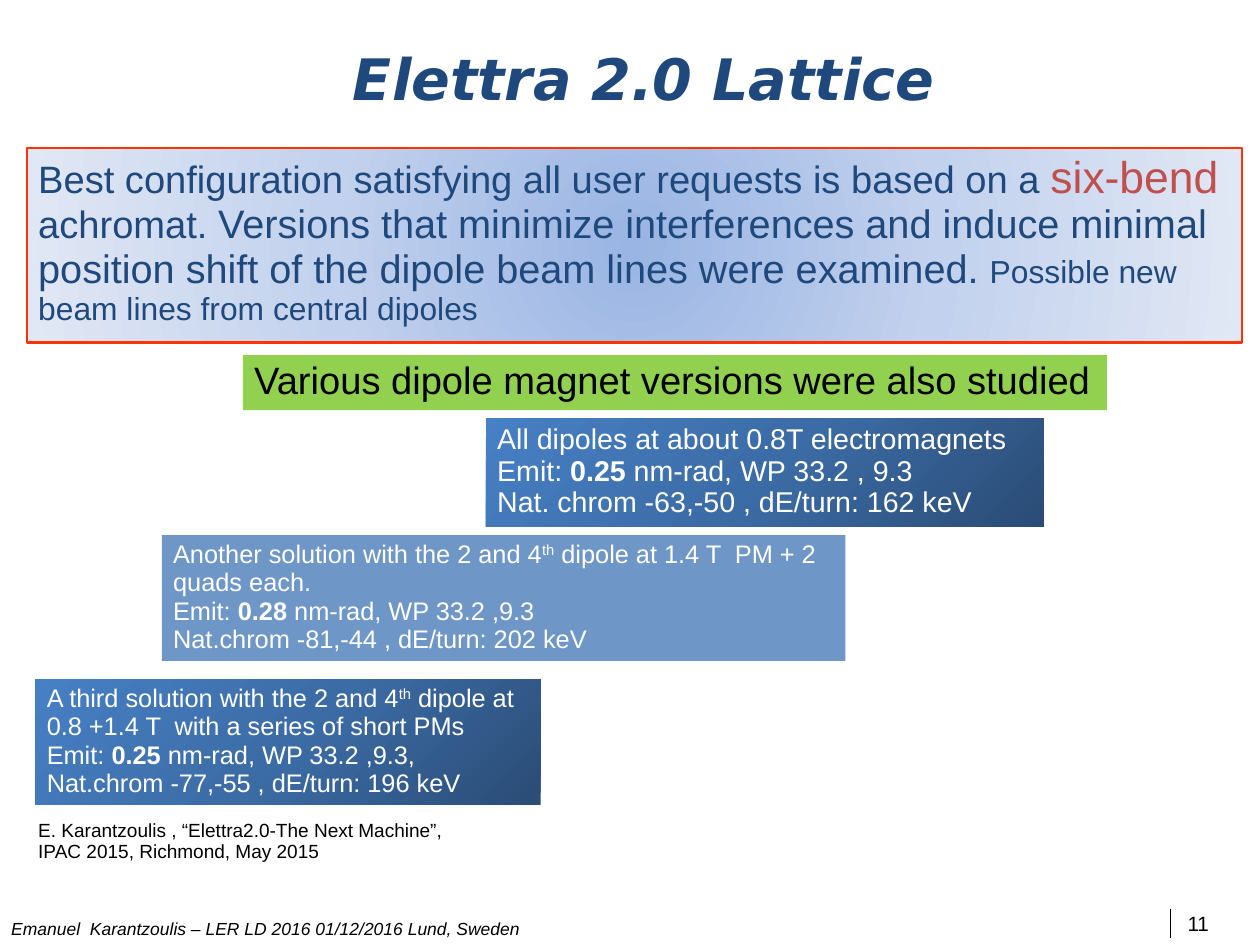
"""Builds the Elettra 2.0 lattice slide."""
from pptx import Presentation
from pptx.dml.color import RGBColor
from pptx.enum.shapes import MSO_CONNECTOR, MSO_SHAPE
from pptx.enum.text import MSO_ANCHOR, MSO_AUTO_SIZE, PP_ALIGN
from pptx.oxml import parse_xml
from pptx.oxml.ns import qn
from pptx.util import Pt
from lxml.etree import SubElement

NAVY = RGBColor(0x1F, 0x49, 0x7D)
RED = RGBColor(0xC0, 0x50, 0x4D)
EDGE = RGBColor(0xFF, 0x33, 0x00)
BLUE = RGBColor(0x4F, 0x81, 0xBD)
GREEN = RGBColor(0x92, 0xD0, 0x50)
BLACK = RGBColor(0, 0, 0)
WHITE = RGBColor(0xFF, 0xFF, 0xFF)

NS = "http://schemas.openxmlformats.org/drawingml/2006/main"
PALE = ("9AB5E4", "C2D1ED", "E1E8F5")
DARK = ("2A4C75", "3C6CA6", "4780C5")
MID = '<a:path path="circle"><a:fillToRect l="50000" t="50000" r="50000" b="50000"/></a:path>'
CORNER = '<a:path path="circle"><a:fillToRect l="100000" t="100000"/></a:path>'
SLANT = '<a:lin ang="13500000" scaled="1"/>'

BOLD = {"bold": True}
SUPER = {"base": 30000}

TITLE = [["Elettra 2.0 Lattice"]]
FOOTER = [["Emanuel  Karantzoulis – LER LD 2016 01/12/2016 Lund, Sweden"]]
NUMBER = [["11"]]
SOURCE = [["E. Karantzoulis , “Elettra2.0-The Next Machine”, IPAC 2015, Richmond, May 2015"]]
BEST = [[
    "Best configuration satisfying all user requests is based on a ",
    ("six-bend", {"size": 28, "color": RED}),
    " achromat. ",
    ("Versions that minimize interferences and induce minimal position shift "
     "of the dipole beam lines were examined. ", {"size": 25}),
    ("Possible new beam lines from central dipoles", {"size": 20}),
]]
STUDY = [["Various dipole magnet versions were also studied"]]
FIRST = [
    ["All dipoles at about 0.8T electromagnets"],
    ["Emit: ", ("0.25", BOLD), " nm-rad, WP 33.2 , 9.3"],
    ["Nat. chrom -63,-50 , dE/turn: 162 keV"],
]
SECOND = [
    ["Another solution with the 2 and 4", ("th", SUPER),
     " dipole at 1.4 T  PM + 2 quads each."],
    ["Emit: ", ("0.28", BOLD), " nm-rad, WP 33.2 ,9.3"],
    ["Nat.chrom -81,-44 , dE/turn: 202 keV"],
]
THIRD = [
    ["A third solution with the 2 and 4", ("th", SUPER),
     " dipole at 0.8 +1.4 T  with a series of short PMs"],
    ["Emit: ", ("0.25", BOLD),
     " nm-rad, WP 33.2 ,9.3, Nat.chrom -77,-55 , dE/turn: 196 keV"],
]

LABELS = [
    (FOOTER, (0, 575.3, 720, 19.4), 11, BLACK,
     {"italic": True, "wrap": False, "inset": (7.2, 4.3, 7.2, 3.6)}),
    (TITLE, (215.3, 14.4, 475.9, 73.4), 36, NAVY,
     {"face": "DejaVu Sans", "bold": True, "italic": True, "anchor": MSO_ANCHOR.MIDDLE}),
    (NUMBER, (748.1, 575, 39.6, 18), 13, BLACK, {"inset": (0, 0, 0, 0)}),
    (SOURCE, (17, 513, 294.5, 34.6), 12, BLACK, {}),
]
PANELS = [
    (BEST, (17, 93.4, 765.4, 122.4), 24, NAVY, (PALE, MID), EDGE),
    (FIRST, (306.1, 263.3, 351.4, 68.4), 18, WHITE, (DARK, CORNER), None),
    (SECOND, (102, 337.1, 430.6, 79.2), 16, WHITE, BLUE, None),
    (THIRD, (22.4, 427.8, 318.2, 79.2), 16, WHITE, (DARK, SLANT), None),
    (STUDY, (153.1, 223.7, 544.3, 34.6), 24, BLACK, GREEN, None),
]


def write(shape, lines, size, color, face="Arial", bold=False, italic=False,
          wrap=True, inset=(7.2, 3.6, 7.2, 3.6), anchor=MSO_ANCHOR.TOP):
    frame = shape.text_frame
    frame.word_wrap = wrap
    frame.auto_size = MSO_AUTO_SIZE.NONE
    frame.vertical_anchor = anchor
    (frame.margin_left, frame.margin_top,
     frame.margin_right, frame.margin_bottom) = map(Pt, inset)
    for i, line in enumerate(lines):
        para = frame.add_paragraph() if i else frame.paragraphs[0]
        para.alignment = PP_ALIGN.LEFT
        para.line_spacing = 0.93
        for part in line:
            text, style = (part, {}) if isinstance(part, str) else part
            run = para.add_run()
            run.text = text
            font = run.font
            font.name = face
            font.size = Pt(style.get("size", size))
            font.bold = style.get("bold", bold)
            font.italic = italic
            font.color.rgb = style.get("color", color)
            if "base" in style:
                run._r.get_or_add_rPr().set("baseline", str(style["base"]))


def paint(shape, fill):
    shape.fill.solid()
    solid = shape._element.spPr.find(qn("a:solidFill"))
    if isinstance(fill, RGBColor):
        shape.fill.fore_color.rgb = fill
        if fill == BLUE:
            SubElement(solid[0], qn("a:alpha"), val="82000")
        return
    tones, course = fill
    stops = "".join(f'<a:gs pos="{i * 50000}"><a:srgbClr val="{tone}"/></a:gs>'
                    for i, tone in enumerate(tones))
    grad = parse_xml(f'<a:gradFill xmlns:a="{NS}" rotWithShape="1">'
                     f'<a:gsLst>{stops}</a:gsLst>{course}</a:gradFill>')
    solid.getparent().replace(solid, grad)


def main():
    deck = Presentation()
    deck.slide_width, deck.slide_height = Pt(793.75), Pt(595.25)
    shapes = deck.slides.add_slide(deck.slide_layouts[6]).shapes

    rule = shapes.add_connector(MSO_CONNECTOR.STRAIGHT,
                                Pt(737.3), Pt(572.4), Pt(737.3), Pt(591.1))
    rule.line.color.rgb = BLACK
    rule.line.width = Pt(0.75)
    SubElement(rule._element.spPr, qn("a:effectLst"))

    for lines, box, size, color, look in LABELS:
        write(shapes.add_textbox(*map(Pt, box)), lines, size, color, **look)

    for lines, box, size, color, fill, edge in PANELS:
        panel = shapes.add_shape(MSO_SHAPE.RECTANGLE, *map(Pt, box))
        panel.shadow.inherit = False
        paint(panel, fill)
        if edge:
            panel.line.color.rgb = edge
            panel.line.width = Pt(1.5)
        else:
            panel.line.fill.background()
        write(panel, lines, size, color)

    deck.save("out.pptx")


if __name__ == "__main__":
    main()
